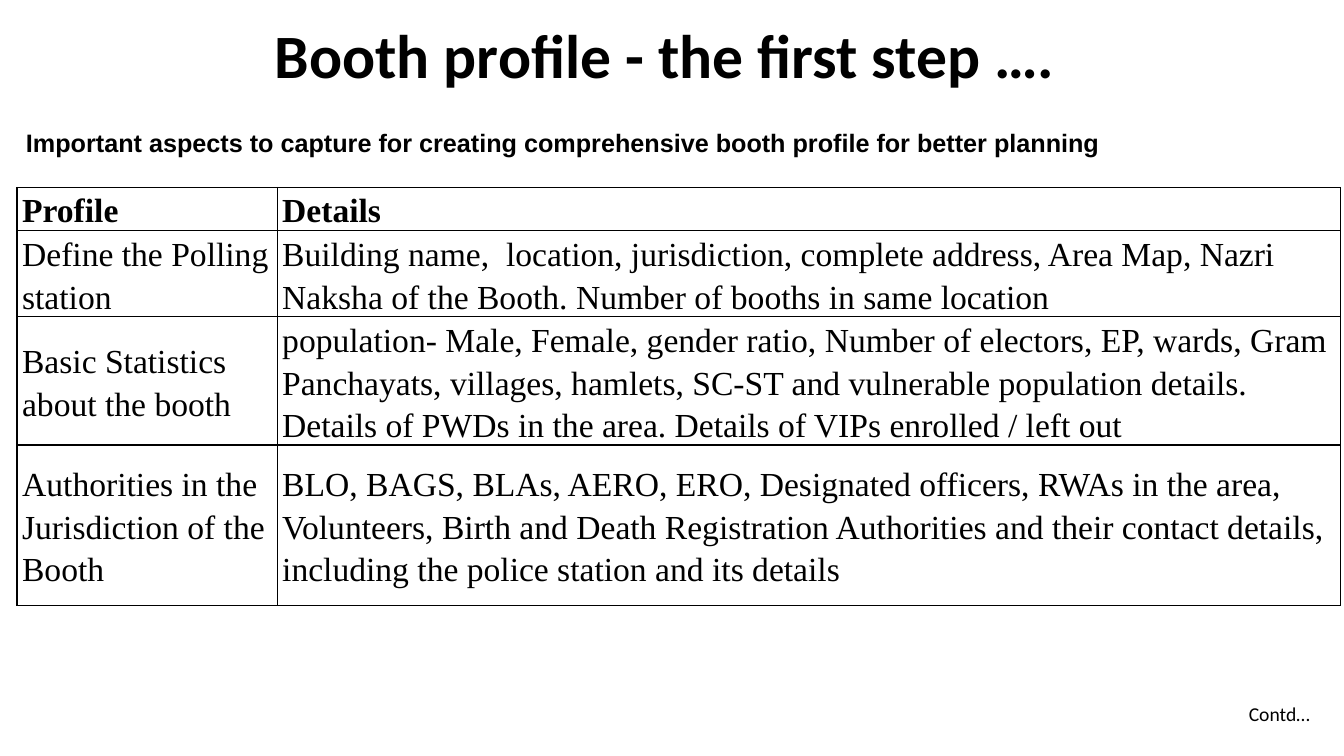
from lxml import etree
from pptx import Presentation
from pptx.dml.color import RGBColor
from pptx.enum import text
from pptx.oxml import ns
from pptx.util import Pt

BLACK = RGBColor(0, 0, 0)
WHITE = RGBColor(255, 255, 255)
COLUMN_WIDTHS = (185.8, 759.6)
ROW_HEIGHTS = (28.8, 61.9, 84.2, 114.5)
BORDER_WIDTH = 1
PROFILE_ROWS = (
    ("Profile", "Details"),
    ("Define the Polling station",
     "Building name,  location, jurisdiction, complete address, Area Map, Nazri "
     "Naksha of the Booth. Number of booths in same location"),
    ("Basic Statistics about the booth",
     "population- Male, Female, gender ratio, Number of electors, EP, wards, Gram "
     "Panchayats, villages, hamlets, SC-ST and vulnerable population details. "
     "Details of PWDs in the area. Details of VIPs enrolled / left out"),
    ("Authorities in the Jurisdiction of the Booth",
     "BLO, BAGS, BLAs, AERO, ERO, Designated officers, RWAs in the area, "
     "Volunteers, Birth and Death Registration Authorities and their contact "
     "details, including the police station and its details"),
)


def set_all(target, **values):
    for name, value in values.items():
        setattr(target, name, value)


def write(frame, wording, font, size, bold=False, **para_format):
    para = frame.paragraphs[0]
    set_all(para, **para_format)
    span = para.add_run()
    span.text = wording
    set_all(span.font, name=font, size=Pt(size), bold=bold)
    span.font.color.rgb = BLACK


def add_title(page, left, top, width, height):
    title = page.shapes.title
    set_all(title, left=Pt(left), top=Pt(top), width=Pt(width), height=Pt(height))
    set_all(title.text_frame, vertical_anchor=text.MSO_ANCHOR.MIDDLE,
            auto_size=text.MSO_AUTO_SIZE.NONE, word_wrap=True)
    write(title.text_frame, "Booth profile - the first step ….", "Calibri", 44,
          bold=True, alignment=text.PP_ALIGN.CENTER)


def add_caption(page, box, wording, font, size, bold=False, wrap=True):
    caption = page.shapes.add_textbox(*map(Pt, box))
    set_all(caption.text_frame, word_wrap=wrap,
            auto_size=text.MSO_AUTO_SIZE.SHAPE_TO_FIT_TEXT)
    write(caption.text_frame, wording, font, size, bold)


def add_borders(cell):
    """Outline a cell; the edges must precede its fill in the XML."""
    properties = cell._tc.get_or_add_tcPr()
    for position, edge in enumerate(("lnL", "lnR", "lnT", "lnB")):
        line = etree.Element(ns.qn(f"a:{edge}"), w=str(Pt(BORDER_WIDTH)))
        fill = etree.SubElement(line, ns.qn("a:solidFill"))
        etree.SubElement(fill, ns.qn("a:srgbClr"), val=str(BLACK))
        properties.insert(position, line)


def add_profile_table(page, left, top):
    frame = page.shapes.add_table(
        len(PROFILE_ROWS), len(COLUMN_WIDTHS), Pt(left), Pt(top),
        Pt(sum(COLUMN_WIDTHS)), Pt(sum(ROW_HEIGHTS)))
    table = frame.table
    set_all(table, first_row=False, horz_banding=False)
    for column, width in zip(table.columns, COLUMN_WIDTHS):
        column.width = Pt(width)
    for index, (row, height) in enumerate(zip(table.rows, ROW_HEIGHTS)):
        row.height = Pt(height)
        for cell, wording in zip(row.cells, PROFILE_ROWS[index]):
            set_all(cell, margin_left=Pt(3.6), margin_right=Pt(3.6),
                    margin_top=0, margin_bottom=0,
                    vertical_anchor=text.MSO_ANCHOR.MIDDLE)
            cell.fill.solid()
            cell.fill.fore_color.rgb = WHITE
            add_borders(cell)
            write(cell.text_frame, wording, "Times New Roman", 24,
                  bold=index == 0, line_spacing=1.15)


def main():
    deck = Presentation()
    set_all(deck, slide_width=Pt(960), slide_height=Pt(540))
    page = deck.slides.add_slide(deck.slide_layouts[5])
    add_title(page, 151.2, 5.8, 648, 65.5)
    add_profile_table(page, 12.2, 133.9)
    add_caption(page, (884.9, 498.2, 59, 24.5), "Contd…", "Calibri", 14, wrap=False)
    add_caption(page, (11.5, 87.1, 787, 28.8),
                "Important aspects to capture for creating comprehensive booth "
                "profile for better planning", "Arial", 18, bold=True)
    deck.save("out.pptx")


if __name__ == "__main__":
    main()
